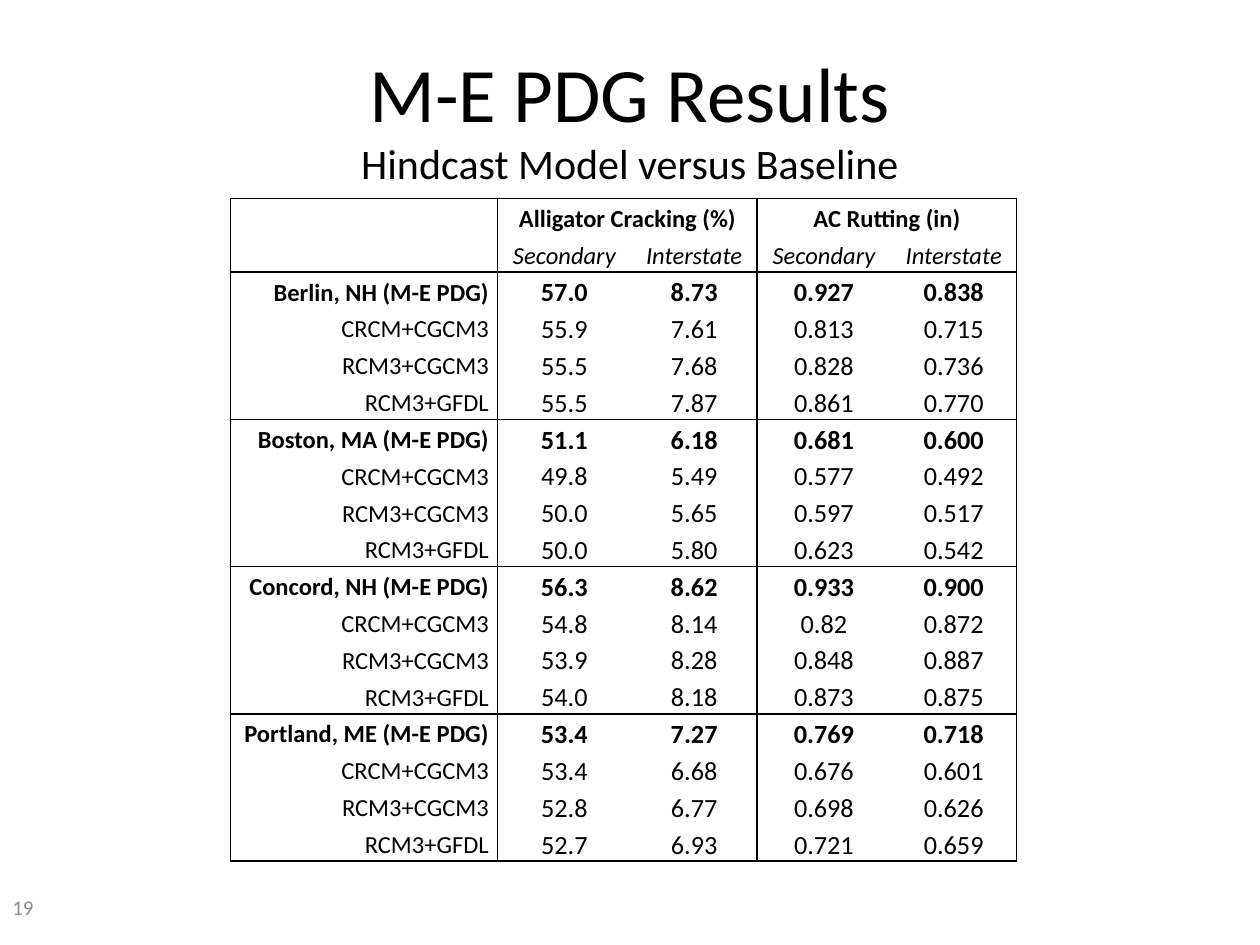
from lxml import etree
from pptx import Presentation
from pptx import util as u
from pptx.dml.color import RGBColor
from pptx.enum import text as t
from pptx.oxml import ns

BLACK = RGBColor(0x00, 0x00, 0x00)
GRAY = RGBColor(0x8C, 0x8C, 0x8C)

COLUMN_WIDTHS = [0.212, 0.106, 0.1, 0.106, 0.1]
MEASURES = ["Alligator Cracking (%)", "AC Rutting (in)"]
ROAD_CLASSES = ["Secondary", "Interstate"]
MODELS = ["CRCM+CGCM3", "RCM3+CGCM3", "RCM3+GFDL"]
RESULTS = {
    "Berlin, NH": [
        ["57.0", "8.73", "0.927", "0.838"],
        ["55.9", "7.61", "0.813", "0.715"],
        ["55.5", "7.68", "0.828", "0.736"],
        ["55.5", "7.87", "0.861", "0.770"],
    ],
    "Boston, MA": [
        ["51.1", "6.18", "0.681", "0.600"],
        ["49.8", "5.49", "0.577", "0.492"],
        ["50.0", "5.65", "0.597", "0.517"],
        ["50.0", "5.80", "0.623", "0.542"],
    ],
    "Concord, NH": [
        ["56.3", "8.62", "0.933", "0.900"],
        ["54.8", "8.14", "0.82", "0.872"],
        ["53.9", "8.28", "0.848", "0.887"],
        ["54.0", "8.18", "0.873", "0.875"],
    ],
    "Portland, ME": [
        ["53.4", "7.27", "0.769", "0.718"],
        ["53.4", "6.68", "0.676", "0.601"],
        ["52.8", "6.77", "0.698", "0.626"],
        ["52.7", "6.93", "0.721", "0.659"],
    ],
}
HEADER_ROWS = 2
GROUP_ROWS = 1 + len(MODELS)
VERTICAL_RULES = {0, 1, 3, 5}


def has_horizontal_rule(edge):
    """Rules run along the table's top and below the header and each city."""
    return edge == 0 or (edge >= HEADER_ROWS and (edge - HEADER_ROWS) % GROUP_ROWS == 0)


class SlideBuilder:
    """Places elements by shares of the slide's width and height."""

    font_name = "Calibri"

    def __init__(self, presentation):
        self.width = presentation.slide_width
        self.height = presentation.slide_height
        self.slide = presentation.slides.add_slide(presentation.slide_layouts[6])

    def frame(self, left, top, width, height):
        return (int(left * self.width), int(top * self.height),
                int(width * self.width), int(height * self.height))

    def style(self, font, size, color=BLACK, bold=False, italic=False):
        font.name = self.font_name
        font.size = u.Pt(size)
        font.color.rgb = color
        font.bold = bold
        font.italic = italic

    def text_box(self, frame, lines, sizes, color=BLACK, alignment=t.PP_ALIGN.LEFT):
        text_frame = self.slide.shapes.add_textbox(*self.frame(*frame)).text_frame
        text_frame.word_wrap = True
        text_frame.vertical_anchor = t.MSO_ANCHOR.MIDDLE
        paragraph = text_frame.paragraphs[0]
        paragraph.text = "\v".join(lines)
        paragraph.alignment = alignment
        for run, size in zip(paragraph.runs, sizes):
            self.style(run.font, size, color)

    def table(self, left, top, column_widths, row_height, row_count):
        frame = self.frame(left, top, sum(column_widths), row_height * row_count)
        table = self.slide.shapes.add_table(row_count, len(column_widths), *frame).table
        table.first_row = table.horz_banding = False
        for column, width in zip(table.columns, column_widths):
            column.width = int(width * self.width)
        for row in table.rows:
            row.height = int(row_height * self.height)
        return table

    def cell(self, cell, content, size, alignment=t.PP_ALIGN.CENTER, bold=False, italic=False):
        cell.margin_left = cell.margin_right = u.Inches(0.07)
        cell.margin_top = cell.margin_bottom = 0
        cell.vertical_anchor = t.MSO_ANCHOR.MIDDLE
        cell.fill.background()
        paragraph = cell.text_frame.paragraphs[0]
        paragraph.text = content
        paragraph.alignment = alignment
        paragraph.line_spacing = 1.15
        self.style(paragraph.font, size, bold=bold, italic=italic)
        for run in paragraph.runs:
            self.style(run.font, size, bold=bold, italic=italic)

    def borders(self, cell, sides):
        """Draw the sides marked true and clear the others."""
        properties = cell._tc.get_or_add_tcPr()
        for index, (side, visible) in enumerate(sides.items()):
            line = etree.Element(ns.qn(f"a:ln{side}"), w=str(u.Pt(1)))
            if visible:
                fill = etree.SubElement(line, ns.qn("a:solidFill"))
                etree.SubElement(fill, ns.qn("a:srgbClr"), val=str(BLACK))
            else:
                etree.SubElement(line, ns.qn("a:noFill"))
            properties.insert(index, line)


def add_results_table(builder):
    row_count = HEADER_ROWS + GROUP_ROWS * len(RESULTS)
    table = builder.table(0.183, 0.21, COLUMN_WIDTHS, 0.039, row_count)

    for row in range(HEADER_ROWS):
        builder.cell(table.cell(row, 0), "", 14)
    for index, measure in enumerate(MEASURES):
        first = 1 + index * len(ROAD_CLASSES)
        table.cell(0, first).merge(table.cell(0, first + 1))
        builder.cell(table.cell(0, first), measure, 14, bold=True)
        for offset, road_class in enumerate(ROAD_CLASSES):
            builder.cell(table.cell(1, first + offset), road_class, 14, italic=True)

    row = HEADER_ROWS
    for city, city_rows in RESULTS.items():
        labels = [f"{city} (M-E PDG)"] + MODELS
        for index, (label, values) in enumerate(zip(labels, city_rows)):
            bold = index == 0
            builder.cell(table.cell(row, 0), label, 14, t.PP_ALIGN.RIGHT, bold)
            for column, value in enumerate(values, start=1):
                builder.cell(table.cell(row, column), value, 15, bold=bold)
            row += 1

    for row in range(row_count):
        for column in range(len(COLUMN_WIDTHS)):
            cell = table.cell(row, column)
            right = column + (cell.span_width if cell.is_merge_origin else 1)
            builder.borders(cell, {
                "L": column in VERTICAL_RULES,
                "R": right in VERTICAL_RULES,
                "T": has_horizontal_rule(row),
                "B": has_horizontal_rule(row + 1),
            })


def main():
    presentation = Presentation()
    presentation.slide_width = u.Inches(10)
    presentation.slide_height = u.Inches(7.5)
    builder = SlideBuilder(presentation)
    builder.text_box((0.05, 0.04, 0.9, 0.167),
                     ["M-E PDG Results", "Hindcast Model versus Baseline"],
                     [44, 24], alignment=t.PP_ALIGN.CENTER)
    builder.text_box((0, 0.933, 0.233, 0.053), ["19"], [12], GRAY)
    add_results_table(builder)
    presentation.save("out.pptx")


if __name__ == "__main__":
    main()
